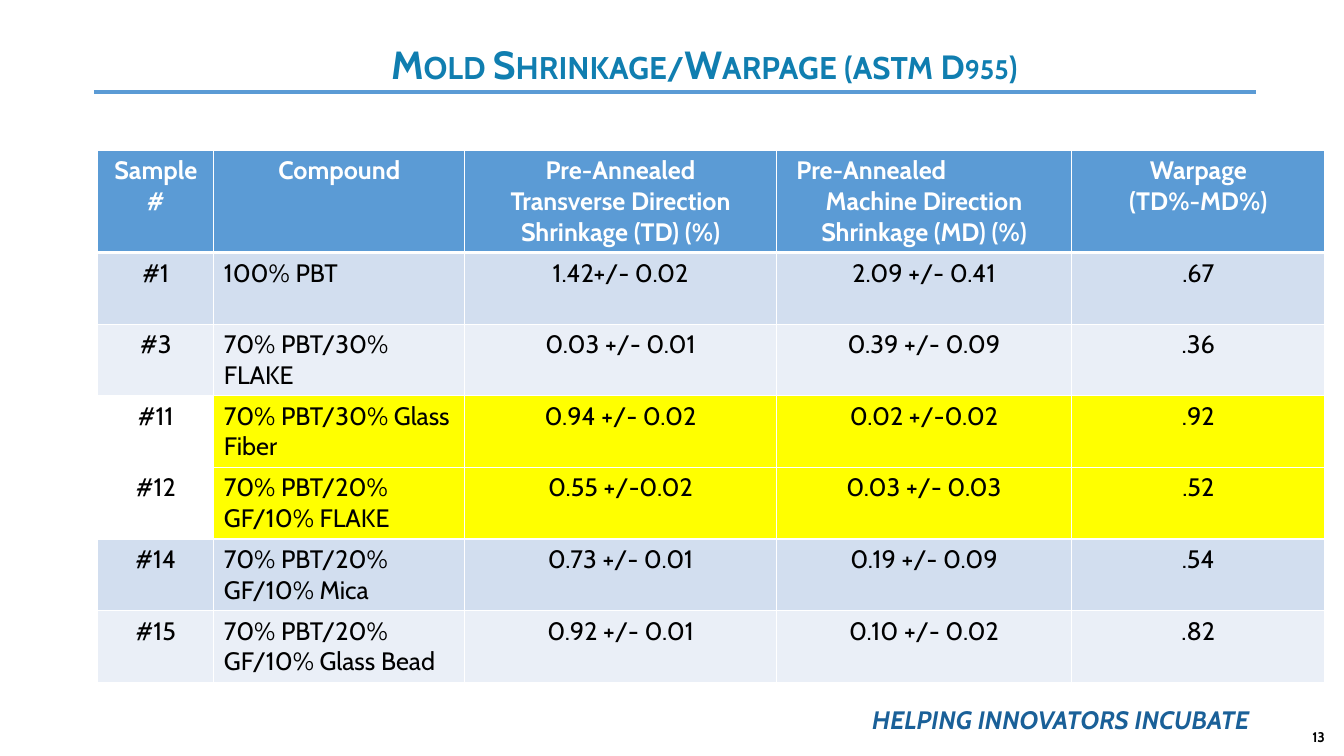
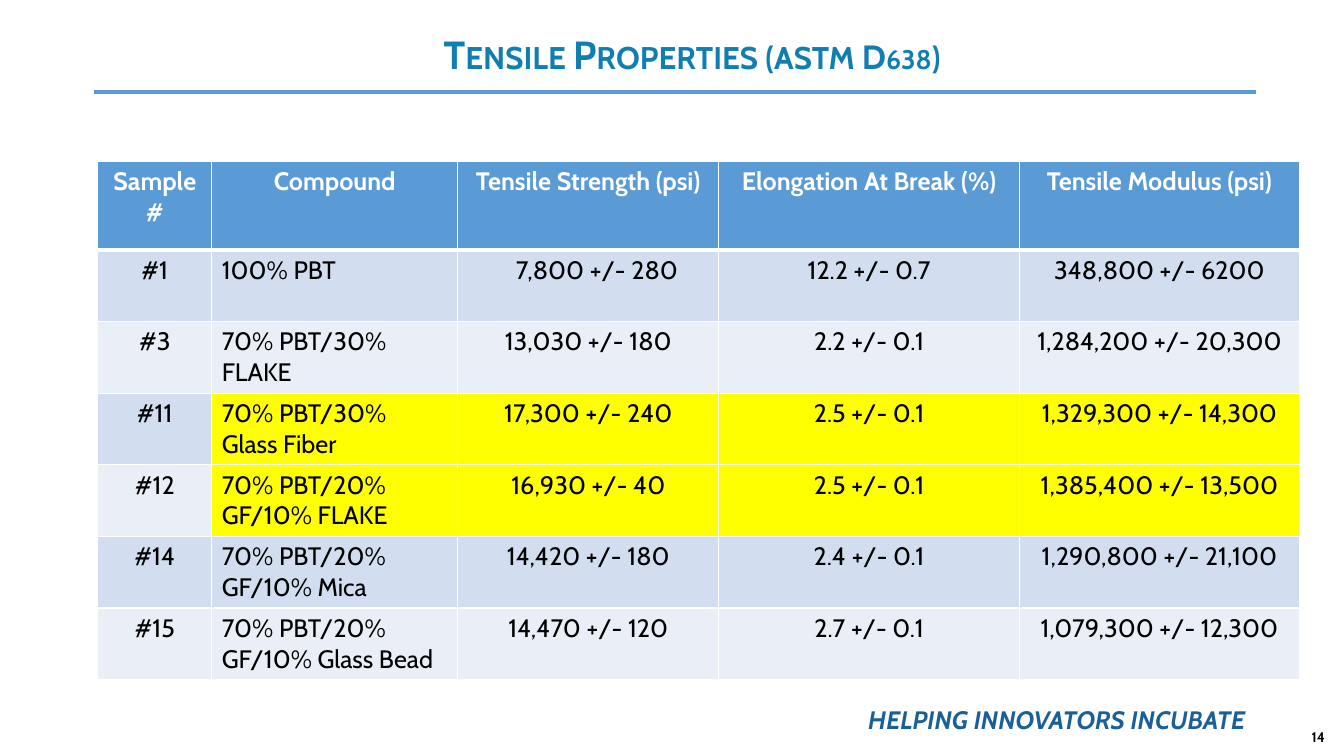
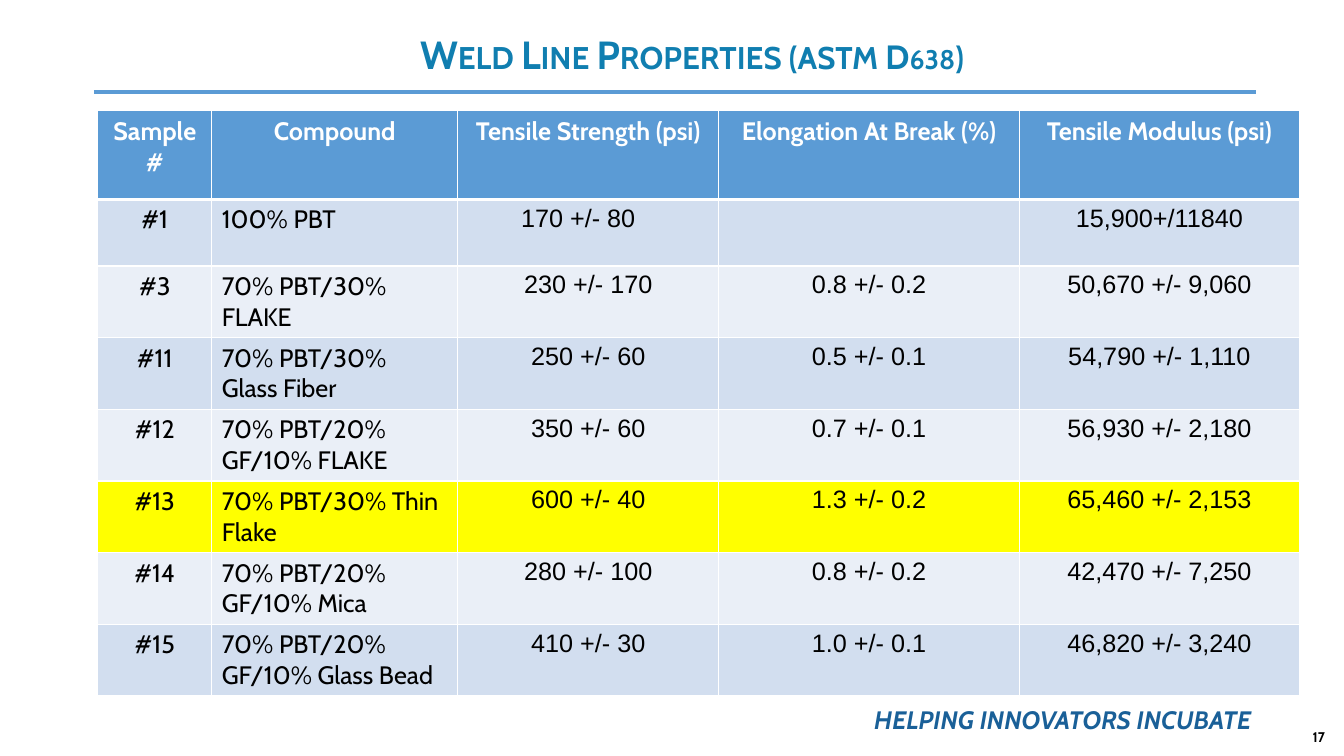
from lxml import etree
from pptx import Presentation
from pptx.dml.color import RGBColor
from pptx.enum.shapes import MSO_CONNECTOR, MSO_SHAPE
from pptx.enum.text import MSO_ANCHOR, MSO_AUTO_SIZE, PP_ALIGN
from pptx.oxml.ns import qn
from pptx.util import Inches, Pt

BLUE = RGBColor(0x5B, 0x9B, 0xD5)
TEAL = RGBColor(0x10, 0x7E, 0xB0)
NAVY = RGBColor(0x1A, 0x60, 0x98)
DARK = RGBColor(0xD2, 0xDE, 0xEF)
PALE = RGBColor(0xEA, 0xEF, 0xF7)
YELLOW = RGBColor(0xFF, 0xFF, 0x00)
WHITE = RGBColor(0xFF, 0xFF, 0xFF)
BLACK = RGBColor(0, 0, 0)
LEFT, CENTER, RIGHT = PP_ALIGN.LEFT, PP_ALIGN.CENTER, PP_ALIGN.RIGHT
MIDDLE = MSO_ANCHOR.MIDDLE
FIT_NONE = MSO_AUTO_SIZE.NONE
STRAIGHT, RECT = MSO_CONNECTOR.STRAIGHT, MSO_SHAPE.RECTANGLE
FONT = "Cabin"
MOTTO = "HELPING INNOVATORS INCUBATE"

# Content
COMPOUNDS = {
    "#1": "100% PBT",
    "#3": "70% PBT/30% FLAKE",
    "#11": "70% PBT/30% Glass Fiber",
    "#12": "70% PBT/20% GF/10% FLAKE",
    "#13": "70% PBT/30% Thin Flake",
    "#14": "70% PBT/20% GF/10% Mica",
    "#15": "70% PBT/20% GF/10% Glass Bead",
}
TENSILE = ["Tensile Strength (psi)", "Elongation At Break (%)",
           "Tensile Modulus (psi)"]
WIDE = [1.13, 2.44, 2.59, 2.98, 2.78]

# "hot" rows are yellow; "lead" is the fill of their first cell (None: band);
# "shift" widens the (left, right) margin of a cell; "indent" sets a header's
# first line flush left
SLIDES = [
    dict(title="Mold Shrinkage/Warpage (astm ", code="D955", at=(1.97, 0.4),
         number="13", motto=8.16, top=1.49, cols=[1.15, 2.49, 3.09, 2.93, 2.51],
         tall=[1.01, 0.71], font=FONT, hot=["#11", "#12"], lead=WHITE,
         shift={}, indent={3: 0.1},
         heads=["Pre-Annealed\nTransverse Direction\nShrinkage (TD) (%)",
                "Pre-Annealed\nMachine Direction\nShrinkage (MD) (%)",
                "Warpage\n(TD%-MD%)"],
         rows=[("#1", "1.42+/- 0.02", "2.09 +/- 0.41", ".67"),
               ("#3", "0.03 +/- 0.01", "0.39 +/- 0.09", ".36"),
               ("#11", "0.94 +/- 0.02", "0.02 +/-0.02", ".92"),
               ("#12", "0.55 +/-0.02", "0.03 +/- 0.03", ".52"),
               ("#14", "0.73 +/- 0.01", "0.19 +/- 0.09", ".54"),
               ("#15", "0.92 +/- 0.01", "0.10 +/- 0.02", ".82")]),
    dict(title="Tensile Properties (astm ", code="D638", at=(1.85, 0.3),
         number="14", motto=8.12, top=1.6, cols=WIDE,
         tall=[0.88, 0.71], font=FONT, hot=["#11", "#12"], lead=None,
         shift={(1, 2): (0.17, 0)}, indent={}, heads=TENSILE,
         rows=[("#1", "7,800 +/- 280", "12.2 +/- 0.7", "348,800 +/- 6200"),
               ("#3", "13,030 +/- 180", "2.2 +/- 0.1", "1,284,200 +/- 20,300"),
               ("#11", "17,300 +/- 240", "2.5 +/- 0.1", "1,329,300 +/- 14,300"),
               ("#12", "16,930 +/- 40", "2.5 +/- 0.1", "1,385,400 +/- 13,500"),
               ("#14", "14,420 +/- 180", "2.4 +/- 0.1", "1,290,800 +/- 21,100"),
               ("#15", "14,470 +/- 120", "2.7 +/- 0.1", "1,079,300 +/- 12,300")]),
    dict(title="Weld Line Properties (astm ", code="D638", at=(1.85, 0.3),
         number="17", motto=8.18, top=1.1, cols=WIDE,
         tall=[0.88, 0.66, 0.71], font="Arial", hot=["#13"], lead=YELLOW,
         shift={(1, 2): (0, 0.2)}, indent={}, heads=TENSILE,
         rows=[("#1", "170 +/- 80", "", "15,900+/11840"),
               ("#3", "230 +/- 170", "0.8 +/- 0.2", "50,670 +/- 9,060"),
               ("#11", "250 +/- 60", "0.5 +/- 0.1", "54,790 +/- 1,110"),
               ("#12", "350 +/- 60", "0.7 +/- 0.1", "56,930 +/- 2,180"),
               ("#13", "600 +/- 40", "1.3 +/- 0.2", "65,460 +/- 2,153"),
               ("#14", "280 +/- 100", "0.8 +/- 0.2", "42,470 +/- 7,250"),
               ("#15", "410 +/- 30", "1.0 +/- 0.1", "46,820 +/- 3,240")]),
]


def add_run(para, text, size, color, bold=False, italic=False, font=FONT):
    run = para.add_run()
    run.text = text
    face = run.font
    face.name, face.size, face.bold, face.italic = font, Pt(size), bold, italic
    face.color.rgb = color
    return run


def add_rule(slide, layout):
    """Draw the line under the title once, on the shared layout."""
    rule = slide.shapes.add_connector(
        STRAIGHT, Inches(0.93), Inches(0.91), Inches(12.46), Inches(0.91))
    rule.line.color.rgb = BLUE
    rule.line.width = Pt(3)
    etree.SubElement(rule.element.spPr, qn("a:effectLst"))
    layout.shapes.element.append(rule.element)


def add_title(slide, data):
    title = slide.shapes.title
    title.left, title.top = map(Inches, data["at"])
    title.width, title.height = Inches(10.03), Inches(0.53)
    frame = title.text_frame
    frame.word_wrap, frame.auto_size = True, FIT_NONE
    frame.vertical_anchor = MIDDLE
    para = frame.paragraphs[0]
    para.alignment, para.line_spacing = CENTER, 0.9
    for text, size in ((data["title"], 28), (data["code"], 24), (")", 28)):
        run = add_run(para, text, size, TEAL, bold=True)
        run.font._element.set("cap", "small")


def add_footer(slide, data):
    # Motto
    box = slide.shapes.add_shape(RECT, Inches(data["motto"]), Inches(6.94),
                                 Inches(4.72), Inches(0.4))
    box.shadow.inherit = False
    box.fill.solid()
    box.fill.fore_color.rgb = WHITE
    box.line.fill.background()
    para = box.text_frame.paragraphs[0]
    para.alignment = CENTER
    add_run(para, MOTTO, 18, NAVY, bold=True, italic=True)
    # Slide number
    box = slide.shapes.add_textbox(Inches(12.68), Inches(7.2),
                                   Inches(0.56), Inches(0.23))
    frame = box.text_frame
    frame.word_wrap, frame.vertical_anchor = True, MIDDLE
    para = frame.paragraphs[0]
    para.alignment = RIGHT
    add_run(para, data["number"], 10, BLACK, bold=True)


def set_cell(cell, fill, head):
    props = cell._tc.get_or_add_tcPr()
    for side in "LRTB":
        width = Pt(3 if head and side == "B" else 1)
        edge = etree.SubElement(props, qn("a:ln" + side), w=str(width))
        paint = etree.SubElement(edge, qn("a:solidFill"))
        etree.SubElement(paint, qn("a:srgbClr"), val=str(WHITE))
    cell.fill.solid()
    cell.fill.fore_color.rgb = fill


def pick_fill(data, row, col, sample):
    if row == 0:
        return BLUE
    band = DARK if row % 2 else PALE
    if sample in data["hot"]:
        return YELLOW if col else data["lead"] or band
    return band


def add_table(slide, data):
    grid = [["Sample #", "Compound", *data["heads"]]]
    grid += [[num, COMPOUNDS[num], *vals] for num, *vals in data["rows"]]
    tall, cols = data["tall"], data["cols"]
    highs = [tall[min(i, len(tall) - 1)] for i in range(len(grid))]
    table = slide.shapes.add_table(
        len(grid), len(cols), Inches(0.97), Inches(data["top"]),
        Inches(sum(cols)), Inches(sum(highs))).table
    table.horz_banding = False
    for col, width in zip(table.columns, cols):
        col.width = Inches(width)
    for row, high in zip(table.rows, highs):
        row.height = Inches(high)

    for i, texts in enumerate(grid):
        head = i == 0
        for j, text in enumerate(texts):
            cell = table.cell(i, j)
            set_cell(cell, pick_fill(data, i, j, texts[0]), head)
            left, right = data["shift"].get((i, j), (0, 0))
            cell.margin_left = Inches(0.1 + left)
            cell.margin_right = Inches(0.1 + right)
            font = FONT if head or j < 2 else data["font"]
            frame = cell.text_frame
            for k, line in enumerate(text.split("\n")):
                para = frame.add_paragraph() if k else frame.paragraphs[0]
                para.alignment = LEFT if j == 1 and not head else CENTER
                if head and k == 0 and j in data["indent"]:
                    para.alignment = LEFT
                    para._p.get_or_add_pPr().set(
                        "marL", str(Inches(data["indent"][j])))
                if line:
                    add_run(para, line, 18, WHITE if head else BLACK,
                            bold=head, font=font)


def main():
    prs = Presentation()
    prs.slide_width, prs.slide_height = Inches(13.33), Inches(7.5)
    layout = prs.slide_layouts[5]
    for i, data in enumerate(SLIDES):
        slide = prs.slides.add_slide(layout)
        if i == 0:
            add_rule(slide, layout)
        add_title(slide, data)
        add_table(slide, data)
        add_footer(slide, data)
    prs.save("out.pptx")


if __name__ == "__main__":
    main()
